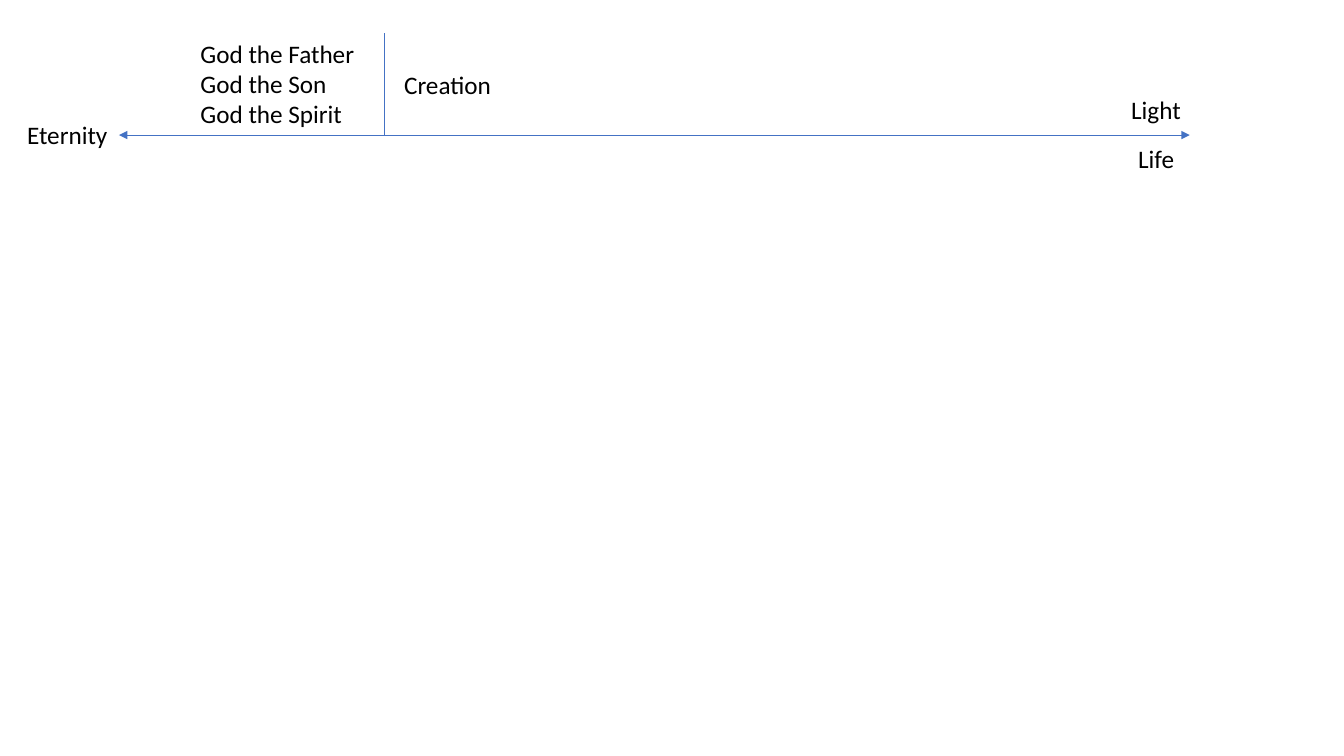
from pptx import Presentation
from pptx.dml.color import RGBColor
from pptx.enum.shapes import MSO_CONNECTOR
from pptx.enum.text import MSO_AUTO_SIZE
from pptx.oxml.ns import qn
from pptx.util import Inches, Pt
from lxml import etree

STRAIGHT = MSO_CONNECTOR.STRAIGHT
GROW = MSO_AUTO_SIZE.SHAPE_TO_FIT_TEXT
COLORS = {"line": "4472C4", "text": "000000"}
SLIDE_W, SLIDE_H = 13.33, 7.5

# Timeline geometry, in inches
AXIS_START, AXIS_END, AXIS_Y = 1.18, 11.8, 1.34
CREATION_X, MARK_TOP = 3.81, 0.33
ROW_H = 0.4
MARK_H = AXIS_Y - MARK_TOP
END_CENTER = 11.47

# Content: lines of text, left, top, width, height, wrap
LABELS = [
    (["God the Father", "God the Son", "God the Spirit"],
     1.89, MARK_TOP, 1.74, MARK_H, True),
    (["Eternity"], AXIS_START - 1.01, 1.13, 1.01, ROW_H, False),
    (["Creation"], CREATION_X + 0.1, MARK_TOP + (MARK_H - ROW_H) / 2,
     1.08, ROW_H, True),
    (["Light"], END_CENTER - 0.35, 0.89, 0.7, ROW_H, False),
    (["Life"], END_CENTER - 0.28, 1.37, 0.56, ROW_H, False),
]


def add_text(slide, lines, left, top, width, height, *, wrap=True,
             size=18, font="Calibri", color="text"):
    box = slide.shapes.add_textbox(*map(Inches, (left, top, width, height)))
    frame = box.text_frame
    frame.word_wrap = wrap
    frame.auto_size = GROW
    frame.text = "\n".join(lines)
    for paragraph in frame.paragraphs:
        paragraph.font.size = Pt(size)
        for run in paragraph.runs:
            run.font.name = font
            run.font.size = Pt(size)
            run.font.color.rgb = RGBColor.from_string(COLORS[color])


def add_line(slide, x1, y1, x2, y2, arrows=False):
    line = slide.shapes.add_connector(STRAIGHT, *map(Inches, (x1, y1, x2, y2)))
    line.line.color.rgb = RGBColor.from_string(COLORS["line"])
    line.line.width = Pt(0.5)
    if arrows:
        outline = line.line._get_or_add_ln()
        for end in ("a:headEnd", "a:tailEnd"):
            etree.SubElement(outline, qn(end), type="triangle")
    etree.SubElement(line._element.spPr, qn("a:effectLst"))


def main():
    prs = Presentation()
    prs.slide_width, prs.slide_height = Inches(SLIDE_W), Inches(SLIDE_H)
    slide = prs.slides.add_slide(prs.slide_layouts[6])

    # Time axis and creation mark
    add_line(slide, AXIS_START, AXIS_Y, AXIS_END, AXIS_Y, arrows=True)
    add_line(slide, CREATION_X, MARK_TOP, CREATION_X, AXIS_Y)

    # Labels
    for lines, left, top, width, height, wrap in LABELS:
        add_text(slide, lines, left, top, width, height, wrap=wrap)

    prs.save("out.pptx")


if __name__ == "__main__":
    main()
